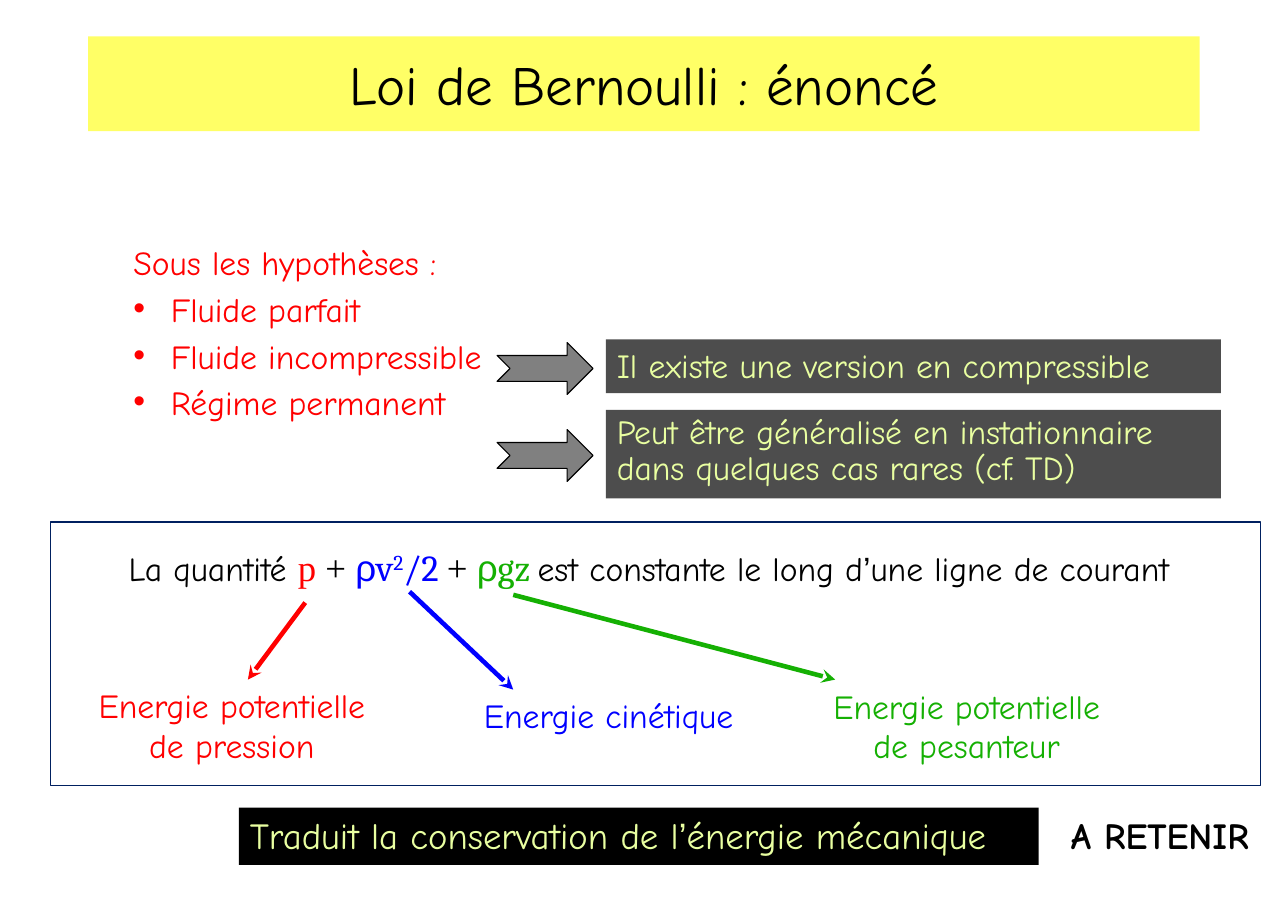
from dataclasses import dataclass

from lxml import etree
from pptx import Presentation
from pptx.dml.color import RGBColor
from pptx.enum.shapes import MSO_CONNECTOR, MSO_SHAPE
from pptx.enum.text import MSO_ANCHOR, MSO_AUTO_SIZE, PP_ALIGN
from pptx.oxml.ns import qn
from pptx.util import Inches, Pt

LEFT, CENTER = PP_ALIGN.LEFT, PP_ALIGN.CENTER
TOP, MIDDLE = MSO_ANCHOR.TOP, MSO_ANCHOR.MIDDLE
NO_AUTOFIT = MSO_AUTO_SIZE.NONE
RECTANGLE, NOTCHED_ARROW = MSO_SHAPE.RECTANGLE, MSO_SHAPE.NOTCHED_RIGHT_ARROW
STRAIGHT = MSO_CONNECTOR.STRAIGHT

# The page is a grid of 100 columns by 100 rows.
PAGE_WIDTH, PAGE_HEIGHT = Inches(11.69), Inches(8.27)
TITLE_LAYOUT = 1


@dataclass(frozen=True)
class Theme:
    black: str = "000000"
    white: str = "FFFFFF"
    navy: str = "002060"
    red: str = "FF0000"
    blue: str = "0000FF"
    green: str = "15B003"
    yellow: str = "FFFF66"
    lime: str = "E9FFA1"
    dark_grey: str = "4D4D4D"
    grey: str = "808080"
    hand: str = "Comic Neue"
    sans: str = "Arial"
    serif: str = "Cambria"
    roman: str = "Times New Roman"
    title_size: int = 36
    large_size: int = 24
    text_size: int = 22
    thin_line: float = 0.75
    arrow_line: float = 3
    gap: int = 12


THEME = Theme()


def column(number):
    return round(PAGE_WIDTH * number / 100)


def row(number):
    return round(PAGE_HEIGHT * number / 100)


def grid_area(left, top, width, height):
    return column(left), row(top), column(width), row(height)


def place(shape, area):
    shape.left, shape.top, shape.width, shape.height = grid_area(*area)


def style_font(font, colour, size, name=THEME.hand, bold=False):
    font.name, font.size, font.bold = name, Pt(size), bold
    font.color.rgb = RGBColor.from_string(colour)


def format_frame(frame, anchor=TOP, side=0.1, edge=0.05):
    frame.word_wrap = True
    frame.auto_size = NO_AUTOFIT
    frame.vertical_anchor = anchor
    frame.margin_left = frame.margin_right = Inches(side)
    frame.margin_top = frame.margin_bottom = Inches(edge)


def write(frame, text, colour, size=THEME.text_size, align=LEFT, spacing=1.0, bold=False):
    """Fill a frame with one paragraph per line of text, all in one style."""
    format_frame(frame)
    frame.text = text
    for index, para in enumerate(frame.paragraphs):
        para.alignment = align
        para.line_spacing = spacing
        para.space_before = Pt(THEME.gap if index else 0)
        for span in para.runs:
            style_font(span.font, colour, size, bold=bold)


def write_spans(frame, spans):
    """Fill a frame with one paragraph of (text, font, colour, size) spans."""
    format_frame(frame)
    para = frame.paragraphs[0]
    para.alignment = LEFT
    for text, font_name, colour, size in spans:
        span = para.add_run()
        span.text = text
        style_font(span.font, colour, size, font_name)
    return para


def set_bullet(para, symbol=None, indent=0.0):
    properties = para._p.get_or_add_pPr()
    properties.set("marL", str(Inches(indent)))
    properties.set("indent", str(-Inches(indent)))
    if symbol:
        etree.SubElement(properties, qn("a:buChar")).set("char", symbol)
    else:
        etree.SubElement(properties, qn("a:buNone"))


def add_text(page, area):
    return page.shapes.add_textbox(*grid_area(*area)).text_frame


def add_panel(page, area, fill, line=None, preset=RECTANGLE):
    panel = page.shapes.add_shape(preset, *grid_area(*area))
    panel.shadow.inherit = False
    panel.fill.solid()
    panel.fill.fore_color.rgb = RGBColor.from_string(fill)
    if line:
        panel.line.color.rgb = RGBColor.from_string(line)
        panel.line.width = Pt(THEME.thin_line)
    else:
        panel.line.fill.background()
    return panel.text_frame


def add_arrow(page, start, end, colour):
    arrow = page.shapes.add_connector(
        STRAIGHT, column(start[0]), row(start[1]), column(end[0]), row(end[1]))
    arrow.line.color.rgb = RGBColor.from_string(colour)
    arrow.line.width = Pt(THEME.arrow_line)
    etree.SubElement(arrow.line._get_or_add_ln(), qn("a:tailEnd")).set("type", "stealth")
    etree.SubElement(arrow._element.spPr, qn("a:effectLst"))


def add_title(page, text):
    title = page.shapes.title
    place(title, (6.85, 4, 86.3, 10.4))
    title.fill.solid()
    title.fill.fore_color.rgb = RGBColor.from_string(THEME.yellow)
    write(title.text_frame, text, THEME.black, THEME.title_size, CENTER)
    format_frame(title.text_frame, MIDDLE, 0, 0)


def add_hypotheses(page, heading, items):
    body = page.placeholders[1]
    place(body, (9.5, 27.2, 44.65, 21.3))
    write(body.text_frame, "\n".join([heading, *items]), THEME.red, spacing=0.7)
    first, *others = body.text_frame.paragraphs
    set_bullet(first)
    for para in others:
        set_bullet(para, "•", 0.34)


def add_remark(page, text, top, height, arrow_top, spacing):
    frame = add_panel(page, (47.05, top, 47.75, height), THEME.dark_grey)
    write(frame, text, THEME.lime, spacing=spacing)
    add_panel(page, (38.6, arrow_top, 7.45, 5.7), THEME.grey, THEME.black, NOTCHED_ARROW)


def add_equation(page):
    small, large = THEME.text_size, THEME.large_size
    para = write_spans(add_text(page, (9.15, 59.25, 86.05, 6.05)), [
        ("La quantité ", THEME.hand, THEME.black, small),
        ("p", THEME.roman, THEME.red, large),
        (" + ", THEME.roman, THEME.black, large),
        ("ρ", THEME.sans, THEME.blue, large),
        ("v", THEME.serif, THEME.blue, large),
        ("2", THEME.serif, THEME.blue, large),
        ("/2 ", THEME.serif, THEME.blue, large),
        ("+ ", THEME.roman, THEME.black, large),
        ("ρ", THEME.sans, THEME.green, large),
        ("gz", THEME.serif, THEME.green, large),
        (" ", THEME.serif, THEME.black, small),
        ("est constante le long d", THEME.hand, THEME.black, small),
        ("’", THEME.sans, THEME.black, small),
        ("une ligne de courant", THEME.hand, THEME.black, small),
    ])
    exponent = next(span for span in para.runs if span.text == "2")
    exponent._r.get_or_add_rPr().set("baseline", "30000")


def add_energy(page, text, colour, area, start, end, spacing=1.0):
    """Name one term of the equation and point to the name."""
    write(add_text(page, area), text, colour, align=CENTER, spacing=spacing)
    add_arrow(page, start, end, colour)


def main():
    deck = Presentation()
    deck.slide_width, deck.slide_height = PAGE_WIDTH, PAGE_HEIGHT
    page = deck.slides.add_slide(deck.slide_layouts[TITLE_LAYOUT])

    add_title(page, "Loi de Bernoulli : énoncé")
    add_hypotheses(page, "Sous les hypothèses :",
                   ["Fluide parfait", "Fluide incompressible", "Régime permanent"])
    add_remark(page, "Il existe une version en compressible", 37.25, 5.9, 37.6, 1.0)
    add_remark(page, "Peut être généralisé en instationnaire dans quelques cas rares (cf. TD)",
               45, 9.7, 47.15, 0.9)

    add_panel(page, (3.95, 57.3, 93.9, 28.9), THEME.white, THEME.navy)
    add_equation(page)
    add_energy(page, "Energie potentielle de pression", THEME.red,
               (5.65, 74.6, 24.7, 10.5), (23.7, 66.15), (19.25, 74.6))
    add_energy(page, "Energie cinétique", THEME.blue,
               (34.9, 75.7, 24.7, 5.9), (31.8, 64.95), (39.85, 75.7))
    add_energy(page, "Energie potentielle\nde pesanteur", THEME.green,
               (62.7, 76.65, 24.7, 8.2), (39.85, 65.3), (64.85, 74.6), spacing=0.5)

    banner = add_panel(page, (18.55, 88.65, 62.1, 6.3), THEME.black)
    write_spans(banner, [
        ("Traduit la conservation de l", THEME.hand, THEME.lime, THEME.large_size),
        ("’", THEME.sans, THEME.lime, THEME.large_size),
        ("énergie mécanique", THEME.hand, THEME.lime, THEME.large_size),
    ])
    write(add_text(page, (82.3, 88.65, 16.85, 6.05)), "A RETENIR",
          THEME.black, THEME.large_size, bold=True)
    deck.save("out.pptx")


if __name__ == "__main__":
    main()
